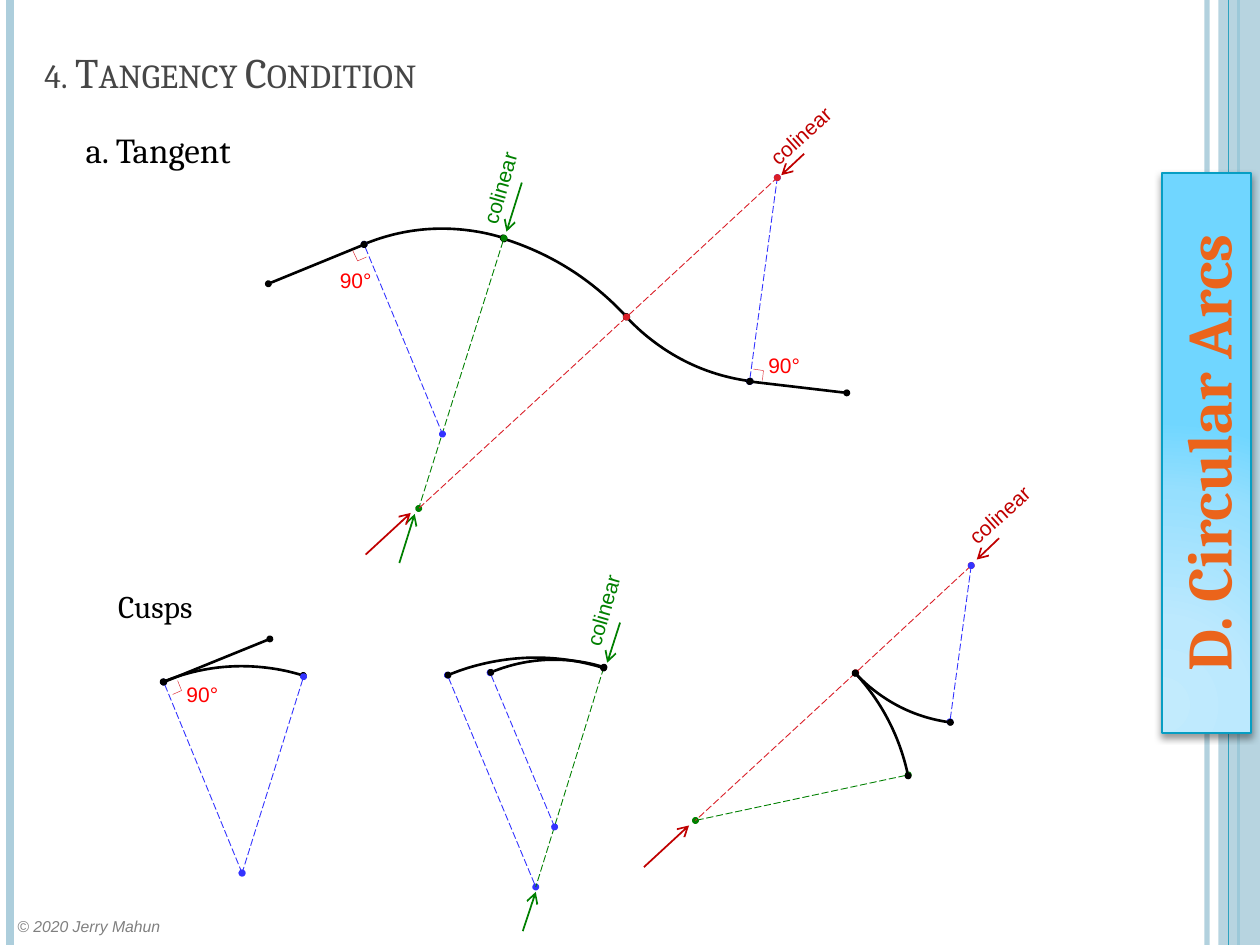
"""Build the slide on tangency conditions of circular arcs."""
from dataclasses import dataclass

from pptx import Presentation
from pptx.dml.color import RGBColor
from pptx.enum.dml import MSO_LINE
from pptx.enum.shapes import MSO_CONNECTOR, MSO_SHAPE
from pptx.enum.text import MSO_ANCHOR, MSO_AUTO_SIZE, PP_ALIGN
from pptx.oxml import parse_xml
from pptx.oxml.ns import nsdecls, qn
from pptx.util import Cm, Pt

STRAIGHT = MSO_CONNECTOR.STRAIGHT
ARC, RECTANGLE = MSO_SHAPE.ARC, MSO_SHAPE.RECTANGLE
LONG_DASH = MSO_LINE.LONG_DASH
LEFT, CENTER = PP_ALIGN.LEFT, PP_ALIGN.CENTER
TOP, MIDDLE, BOTTOM = MSO_ANCHOR.TOP, MSO_ANCHOR.MIDDLE, MSO_ANCHOR.BOTTOM
NO_FIT, GROW = MSO_AUTO_SIZE.NONE, MSO_AUTO_SIZE.SHAPE_TO_FIT_TEXT


@dataclass(frozen=True)
class Theme:
    """Colours, fonts and type sizes of the slide."""
    black: str = "000000"
    blue: str = "3333FF"
    green: str = "008000"
    red: str = "DA1F28"
    dark_red: str = "C00000"
    angle_red: str = "FF0000"
    title: str = "464646"
    grey: str = "808080"
    orange: str = "EB641B"
    pale: str = "ADCEDC"
    teal: str = "2DA2BF"
    banner_line: str = "079EC3"
    banner_stops: tuple = ((0, "C2EBFD"), (30, "BCE9FE"), (75, "96DFFE"), (100, "70D6FF"))
    serif: str = "Cambria"
    sans: str = "Arial"
    banner_size: int = 36
    title_size: int = 24
    body_size: int = 20
    caption_size: int = 18
    label_size: int = 12
    footer_size: int = 9


THEME = Theme()


def write_text(frame, text, size, color, font=THEME.serif, bold=False, italic=False,
               small_caps=False, align=LEFT, anchor=TOP, wrap=True, fit=GROW, before=0):
    """Write one formatted paragraph into a text frame."""
    frame.word_wrap, frame.auto_size, frame.vertical_anchor = wrap, fit, anchor
    paragraph = frame.paragraphs[0]
    paragraph.alignment, paragraph.space_before = align, Pt(before)
    run = paragraph.add_run()
    run.text = text
    run.font.name, run.font.size = font, Pt(size)
    run.font.bold, run.font.italic = bold, italic
    run.font.color.rgb = RGBColor.from_string(color)
    if small_caps:
        run.font._element.set("cap", "small")
    return paragraph


def add_text(shapes, text, box, rotation=0, **text_format):
    """Add a text box at (left, top, width, height)."""
    shape = shapes.add_textbox(*map(Cm, box))
    shape.rotation = rotation
    write_text(shape.text_frame, text, **text_format)


def set_opacity(element, percent):
    """Make every colour in the element partly transparent."""
    for color in element.iter(qn("a:srgbClr")):
        color.append(parse_xml(f'<a:alpha {nsdecls("a")} val="{percent * 1000}"/>'))


def style_line(shape, color, width, dash=None, head=None, tail=None):
    """Set colour, width, dash and line ends."""
    shape.line.color.rgb = RGBColor.from_string(color)
    shape.line.width = Pt(width)
    if dash:
        shape.line.dash_style = dash
    outline = shape.element.spPr.find(qn("a:ln"))
    for tag, kind in (("headEnd", head), ("tailEnd", tail)):
        if kind:
            size = "sm" if kind == "oval" else "med"
            outline.append(parse_xml(
                f'<a:{tag} {nsdecls("a")} type="{kind}" w="{size}" len="{size}"/>'))


def add_line(shapes, start, end, color, width, **line_format):
    """Add a straight line without a shadow."""
    line = shapes.add_connector(STRAIGHT, *map(Cm, (*start, *end)))
    style_line(line, color, width, **line_format)
    line.element.spPr.append(parse_xml(f'<a:effectLst {nsdecls("a")}/>'))
    return line


def add_radius(shapes, start, end, color, ends="oval"):
    """Add a dashed radius line."""
    add_line(shapes, start, end, color, 0.5, dash=LONG_DASH, head=ends, tail=ends)


def add_tangent(shapes, start, end):
    """Add a solid tangent line with dotted ends."""
    add_line(shapes, start, end, THEME.black, 1.5, head="oval", tail="oval")


def add_arrow(shapes, start, end, color):
    """Add a pointer with its arrowhead at the end."""
    add_line(shapes, start, end, color, 1, tail="arrow")


def add_arc(shapes, center, radius, rotation, start=270, end=309.61):
    """Add a circular arc around a centre, with angles in degrees."""
    left, top = (value - radius for value in center)
    arc = shapes.add_shape(ARC, *map(Cm, (left, top, 2 * radius, 2 * radius)))
    arc.adjustments[0], arc.adjustments[1] = start * 0.6, end * 0.6
    arc.rotation = rotation
    arc.fill.background()
    arc.shadow.inherit = False
    style_line(arc, THEME.black, 1.5, head="oval", tail="oval")


def add_right_angle(shapes, first, corner, last, label):
    """Add a right-angle mark and its 90° label."""
    for end in (first, last):
        add_line(shapes, end, corner, THEME.red, 0.25)
    add_text(shapes, "90°", (*label, 1.14, 0.76), size=THEME.label_size,
             color=THEME.angle_red, font=THEME.sans, wrap=False)


def add_colinear(shapes, position, color):
    """Add a slanted label along a line of centres."""
    rotation = 286.1 if color == THEME.green else 318.1
    add_text(shapes, "colinear", (*position, 2.01, 0.76), rotation, size=THEME.label_size,
             color=color, font=THEME.sans, wrap=False)


def add_frame(shapes):
    """Add the side stripes and the footer."""
    for x, color, width, opacity in ((24.33, THEME.pale, 3, 93), (0.2, THEME.pale, 4.5, 100),
                                     (24.97, THEME.teal, 1.5, 100)):
        line = add_line(shapes, (x, 0), (x, 19.05), color, width)
        set_opacity(line.element, opacity)
    band = shapes.add_shape(RECTANGLE, *map(Cm, (24.56, 0, 0.84, 19.05)))
    band.fill.solid()
    band.fill.fore_color.rgb = RGBColor.from_string(THEME.pale)
    band.line.fill.background()
    band.shadow.inherit = False
    set_opacity(band.element, 87)
    add_line(shapes, (24.77, 0), (24.77, 19.05), THEME.teal, 0.75)
    add_text(shapes, "© 2020 Jerry Mahun", (0.1, 18.36, 3.66, 0.64), size=THEME.footer_size,
             color=THEME.grey, font=THEME.sans, italic=True)


def add_banner(shapes):
    """Add the vertical chapter banner."""
    banner = shapes.add_shape(RECTANGLE, *map(Cm, (18.67, 8.23, 11.3, 1.8)))
    banner.rotation = 270
    banner.fill.gradient()
    style_line(banner, THEME.banner_line, 1)
    banner.shadow.inherit = False
    properties = banner.element.spPr
    stops = "".join(f'<a:gs pos="{place * 1000}"><a:srgbClr val="{color}"/></a:gs>'
                    for place, color in THEME.banner_stops)
    properties.replace(properties.find(qn("a:gradFill")), parse_xml(
        f'<a:gradFill {nsdecls("a")} rotWithShape="1"><a:gsLst>{stops}</a:gsLst>'
        '<a:path path="circle"><a:fillToRect l="5000" t="100000" r="120000" b="10000"/>'
        '</a:path></a:gradFill>'))
    properties.find(qn("a:effectLst")).append(parse_xml(
        f'<a:outerShdw {nsdecls("a")} blurRad="{Pt(4)}" dist="{Pt(2)}" dir="5400000" '
        'rotWithShape="0"><a:srgbClr val="000000"><a:alpha val="40000"/></a:srgbClr>'
        '</a:outerShdw>'))
    write_text(banner.text_frame, "D. Circular Arcs", THEME.banner_size, THEME.orange,
               bold=True, align=CENTER, anchor=MIDDLE, wrap=False)


def add_tangent_curves(shapes):
    """Draw the tangent, compound and reverse curve."""
    begin, curve_start, compound, reverse = (5.41, 5.72), (7.34, 4.93), (10.16, 4.8), (12.63, 6.39)
    curve_end, finish = (15.11, 7.69), (17.07, 7.92)
    first, second, third = (8.92, 8.75), (8.44, 10.25), (15.67, 3.58)
    add_arc(shapes, first, 4.14, 337.6)
    add_arc(shapes, third, 4.14, 187.6)
    add_arc(shapes, second, 5.7, 17.6, end=299.62)
    add_radius(shapes, compound, second, THEME.green)
    add_radius(shapes, reverse, second, THEME.red, ends=None)
    add_radius(shapes, curve_start, first, THEME.blue)
    add_tangent(shapes, curve_start, begin)
    add_radius(shapes, curve_end, third, THEME.blue)
    add_radius(shapes, reverse, third, THEME.red)
    add_tangent(shapes, curve_end, finish)
    add_arrow(shapes, (10.52, 3.68), (10.21, 4.67), THEME.green)
    add_arrow(shapes, (8.05, 11.35), (8.36, 10.36), THEME.green)
    add_arrow(shapes, (7.37, 11.18), (8.28, 10.34), THEME.dark_red)
    add_arrow(shapes, (16.21, 3.1), (15.75, 3.53), THEME.dark_red)
    add_right_angle(shapes, (15.37, 7.67), (15.39, 7.47), (15.19, 7.44), (15.24, 6.99))
    add_right_angle(shapes, (7.11, 5.05), (7.21, 5.26), (7.39, 5.18), (6.6, 5.26))
    add_colinear(shapes, (9.07, 3.4), THEME.green)
    add_colinear(shapes, (15.14, 2.34), THEME.dark_red)


def add_reverse_cusp(shapes):
    """Draw the cusp of two opposed arcs."""
    cusp, upper, lower = (17.25, 13.56), (19.58, 11.4), (14.02, 16.54)
    add_radius(shapes, cusp, upper, THEME.red)
    add_radius(shapes, (18.31, 15.62), lower, THEME.green)
    add_radius(shapes, cusp, lower, THEME.red, ends=None)
    add_radius(shapes, (19.15, 14.55), upper, THEME.blue)
    add_arc(shapes, upper, 3.19, 187.6)
    add_arc(shapes, lower, 4.38, 17.6, start=299.79, end=330.58)
    add_arrow(shapes, (12.98, 17.48), (13.89, 16.64), THEME.dark_red)
    add_arrow(shapes, (20.14, 10.85), (19.69, 11.28), THEME.dark_red)
    add_colinear(shapes, (19.15, 9.98), THEME.dark_red)


def add_compound_cusp(shapes):
    """Draw the cusp of two arcs on one side."""
    inner, outer = (11.18, 16.67), (10.8, 17.88)
    add_radius(shapes, (9.02, 13.61), outer, THEME.blue)
    add_radius(shapes, (12.17, 13.46), outer, THEME.green, ends=None)
    add_radius(shapes, (9.88, 13.56), inner, THEME.blue)
    add_arc(shapes, inner, 3.37, 337.6)
    add_arc(shapes, outer, 4.62, 17.6, start=229.93, end=269.64)
    add_arrow(shapes, (12.5, 12.55), (12.24, 13.36), THEME.green)
    add_arrow(shapes, (10.54, 18.77), (10.8, 17.98), THEME.green)
    add_colinear(shapes, (11.15, 11.91), THEME.green)


def add_line_cusp(shapes):
    """Draw the cusp of a line and an arc."""
    cusp, center = (3.3, 13.75), (4.88, 17.6)
    add_radius(shapes, cusp, center, THEME.blue)
    add_arc(shapes, center, 4.17, 337.6)
    add_tangent(shapes, cusp, (5.44, 12.88))
    add_radius(shapes, (6.12, 13.64), center, THEME.blue)
    add_right_angle(shapes, (3.48, 14), (3.66, 13.92), (3.58, 13.72), (3.51, 13.61))


def fill_placeholder(shape, text, box, **text_format):
    """Move a placeholder and write its unbulleted text."""
    shape.left, shape.top, shape.width, shape.height = map(Cm, box)
    paragraph = write_text(shape.text_frame, text, fit=NO_FIT, **text_format)
    properties = paragraph._p.get_or_add_pPr()
    properties.set("marL", "0")
    properties.set("indent", "0")
    properties.append(parse_xml(f'<a:buNone {nsdecls("a")}/>'))


def main():
    """Build and save the slide."""
    presentation = Presentation()
    presentation.slide_width, presentation.slide_height = Cm(25.4), Cm(19.05)
    slide = presentation.slides.add_slide(presentation.slide_layouts[1])
    shapes = slide.shapes
    fill_placeholder(shapes.title, "4. Tangency Condition", (0.64, 0.76, 21.39, 1.32),
                     size=THEME.title_size, color=THEME.title, small_caps=True, anchor=BOTTOM)
    fill_placeholder(slide.placeholders[1], "a. Tangent", (1.47, 2.46, 20.52, 15.52),
                     size=THEME.body_size, color=THEME.black, before=6)
    add_frame(shapes)
    add_banner(shapes)
    for draw in (add_tangent_curves, add_reverse_cusp, add_compound_cusp, add_line_cusp):
        draw(shapes.add_group_shape().shapes)
    add_text(shapes, "Cusps", (2.13, 11.71, 2.34, 1.02), size=THEME.caption_size,
             color=THEME.black, wrap=False)
    presentation.save("out.pptx")


if __name__ == "__main__":
    main()
